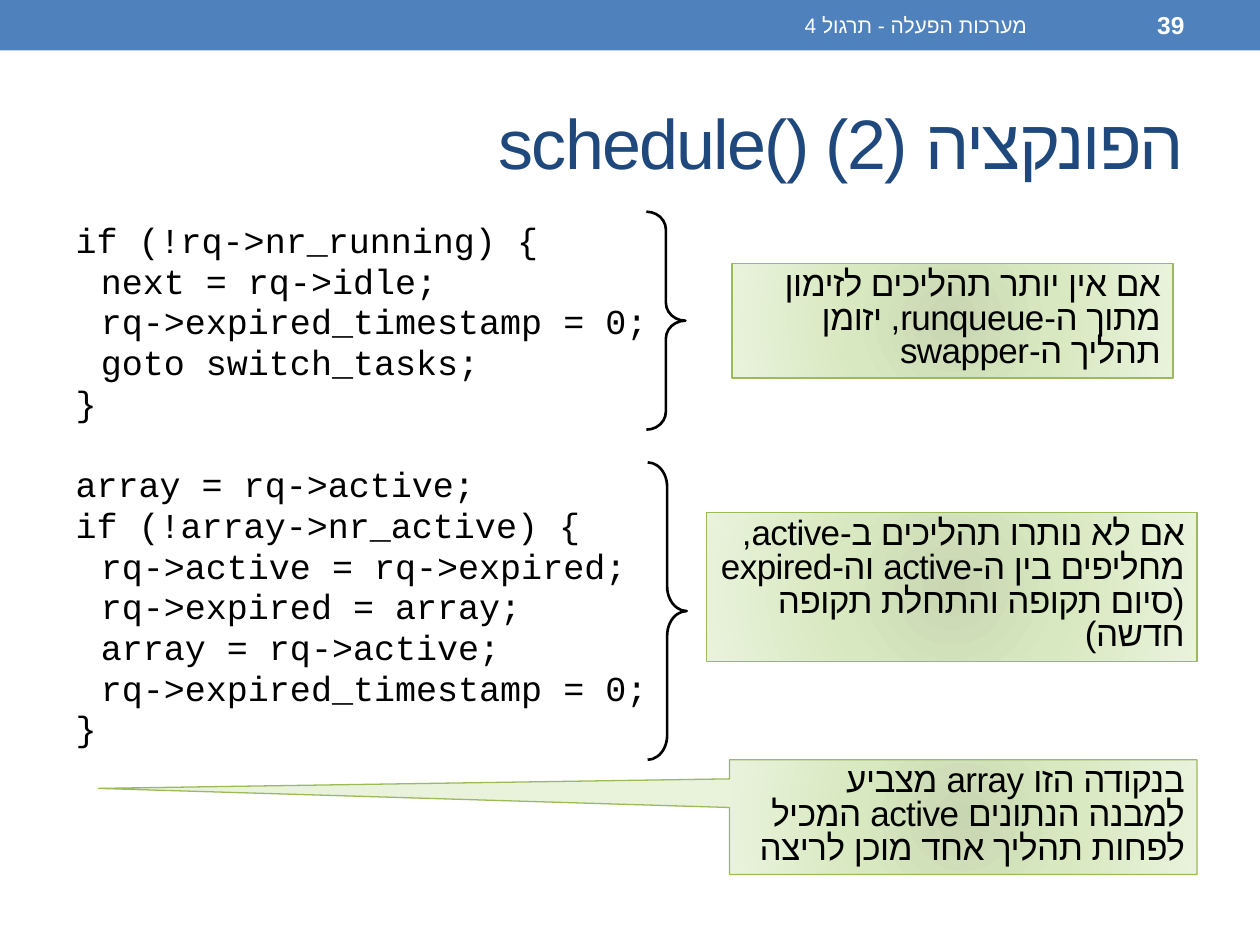
"""Build the slide that explains the second part of schedule()."""
from dataclasses import dataclass

from pptx import Presentation
from pptx.dml.color import RGBColor
from pptx.enum.shapes import MSO_SHAPE
from pptx.enum.text import MSO_ANCHOR, MSO_AUTO_SIZE, PP_ALIGN
from pptx.oxml import parse_xml
from pptx.oxml.ns import nsdecls, qn
from pptx.util import Inches, Pt

RECT, BRACE = MSO_SHAPE.RECTANGLE, MSO_SHAPE.RIGHT_BRACE
CALLOUT = MSO_SHAPE.RECTANGULAR_CALLOUT
TOP, MIDDLE = MSO_ANCHOR.TOP, MSO_ANCHOR.MIDDLE
FIXED, GROW = MSO_AUTO_SIZE.NONE, MSO_AUTO_SIZE.SHAPE_TO_FIT_TEXT
LEFT, RIGHT = PP_ALIGN.LEFT, PP_ALIGN.RIGHT
WIDE, HIGH = Inches(10), Inches(7.5)
BLACK, WHITE, BLUE, NAVY, GREEN = "000000", "FFFFFF", "4F81BD", "1F497D", "9BBB59"
STOPS = ((0, "C8D7B2"), (45, "D8E8C0"), (100, "E9F3DC"))
BLOCKS = (
    """if (!rq->nr_running) {
\tnext = rq->idle;
\trq->expired_timestamp = 0;
\tgoto switch_tasks;
}""",
    """array = rq->active;
if (!array->nr_active) {
\trq->active = rq->expired;
\trq->expired = array;
\tarray = rq->active;
\trq->expired_timestamp = 0;
}""",
)


@dataclass(frozen=True)
class Box:
    """Hold a place in percent of the slide's width and height."""
    x: float
    y: float
    w: float
    h: float

    def place(self) -> tuple[int, int, int, int]:
        """Return left, top, width and height as lengths."""
        return (int(WIDE * self.x / 100), int(HIGH * self.y / 100),
                int(WIDE * self.w / 100), int(HIGH * self.h / 100))


@dataclass(frozen=True)
class Brace:
    """Describe a brace beside a block of code."""
    box: Box
    curve: float


@dataclass(frozen=True)
class Note:
    """Describe a green note and its outline."""
    box: Box
    text: str
    kind: int = RECT
    tip: tuple = ()


BRACES = (
    Brace(Box(51.3, 22.4, 3.1, 23.07), 0.46),
    Brace(Box(51.4, 48.93, 3.1, 31.47), 0.63),
)
NOTES = (
    Note(Box(58.1, 27.87, 35, 12.13),
         "אם אין יותר תהליכים לזימון מתוך ה-runqueue, יזומן תהליך ה-swapper"),
    Note(Box(56.1, 54.27, 38.9, 15.73),
         "אם לא נותרו תהליכים ב-active, מחליפים בין ה-active וה-expired\v"
         "(סיום תקופה והתחלת תקופה חדשה)"),
    Note(Box(57.9, 80.4, 37.1, 12.13),
         "בנקודה הזו array מצביע למבנה הנתונים active המכיל לפחות תהליך אחד מוכן לריצה",
         CALLOUT, (-1.85, -0.25)),
)


def color(code: str) -> RGBColor:
    """Turn a hex string into a colour."""
    return RGBColor.from_string(code)


def write(para, text: str, *, size=20, font="Arial", ink=BLACK, bold=False,
          rtl=True, lead=None, track=0) -> None:
    """Write one paragraph in the given format."""
    para.text = text
    para.alignment = RIGHT if rtl else LEFT
    para.line_spacing = lead
    para._p.get_or_add_pPr().set("rtl", str(int(rtl)))
    for run in para.runs:
        face = run.font
        face.size, face.name, face.bold = Pt(size), font, bold
        face.color.rgb = color(ink)
        props = run._r.get_or_add_rPr()
        props.append(parse_xml(f'<a:cs {nsdecls("a")} typeface="{font}"/>'))
        if track:
            props.set("spc", str(round(track * 100)))


def frame(shape, anchor=MIDDLE, fit=FIXED):
    """Prepare the text frame and return its first paragraph."""
    text = shape.text_frame
    text.word_wrap, text.vertical_anchor, text.auto_size = True, anchor, fit
    return text.paragraphs[0]


def label(slide, box: Box, text: str, **look) -> None:
    """Add a text box in the top band."""
    write(frame(slide.shapes.add_textbox(*box.place())), text, ink=WHITE, **look)


def draw(slide, kind: int, box: Box, line="", width=0.75):
    """Add an unfilled shape with an optional outline."""
    shape = slide.shapes.add_shape(kind, *box.place())
    shape.shadow.inherit = False
    shape.fill.background()
    if line:
        shape.line.color.rgb, shape.line.width = color(line), Pt(width)
    else:
        shape.line.fill.background()
    return shape


def shade(shape) -> None:
    """Fill a shape with the round green gradient."""
    shape.fill.gradient()
    grad = shape._element.spPr.find(qn("a:gradFill"))
    stops = "".join(f'<a:gs pos="{at * 1000}"><a:srgbClr val="{code}"/></a:gs>'
                    for at, code in STOPS)
    sides = " ".join(f'{side}="100000"' for side in "ltrb")
    grad.getparent().replace(grad, parse_xml(
        f'<a:gradFill {nsdecls("a")} rotWithShape="1"><a:gsLst>{stops}</a:gsLst>'
        f'<a:path path="circle"><a:fillToRect {sides}/></a:path></a:gradFill>'))


def code(shape) -> None:
    """List the code lines, with a gap between the blocks."""
    para = frame(shape, TOP)
    first = True
    for block in BLOCKS:
        for row, line in enumerate(block.split("\n")):
            if not first:
                para = shape.text_frame.add_paragraph()
            write(para, line, font="Courier New", rtl=False, lead=0.8)
            if row == 0 and not first:
                para.space_before = Pt(27.5)
            props = para._p.get_or_add_pPr()
            props.set("marL", str(Inches(0.2)))
            props.set("indent", str(-Inches(0.2)))
            props.append(parse_xml(f'<a:buNone {nsdecls("a")}/>'))
            first = False


def move(shape, box: Box) -> None:
    """Put a placeholder in its place."""
    shape.left, shape.top, shape.width, shape.height = box.place()


def main() -> None:
    """Build and save the slide."""
    deck = Presentation()
    deck.slide_width, deck.slide_height = WIDE, HIGH
    slide = deck.slides.add_slide(deck.slide_layouts[1])
    band = draw(slide, RECT, Box(0, 0, 100, 5.33))
    band.fill.solid()
    band.fill.fore_color.rgb = color(BLUE)
    title, body = slide.placeholders
    move(title, Box(5, 7.73, 90, 14.4))
    write(frame(title), "הפונקציה schedule() (2)", size=40, ink=NAVY, track=-1)
    move(body, Box(5, 23.33, 90, 71.07))
    code(body)
    label(slide, Box(37.5, 0.27, 45, 4.8), "מערכות הפעלה - תרגול 4", size=12)
    label(slide, Box(83.3, 0.27, 11.7, 4.8), "39", size=14, bold=True)
    for brace in BRACES:
        shape = draw(slide, BRACE, brace.box, BLACK, 1.5)
        shape.adjustments[0] = brace.curve
    for note in NOTES:
        shape = draw(slide, note.kind, note.box, GREEN)
        shade(shape)
        for spot, value in enumerate(note.tip):
            shape.adjustments[spot] = value
        write(frame(shape, TOP, GROW), note.text, lead=0.8, track=-0.35)
    deck.save("out.pptx")


if __name__ == "__main__":
    main()
